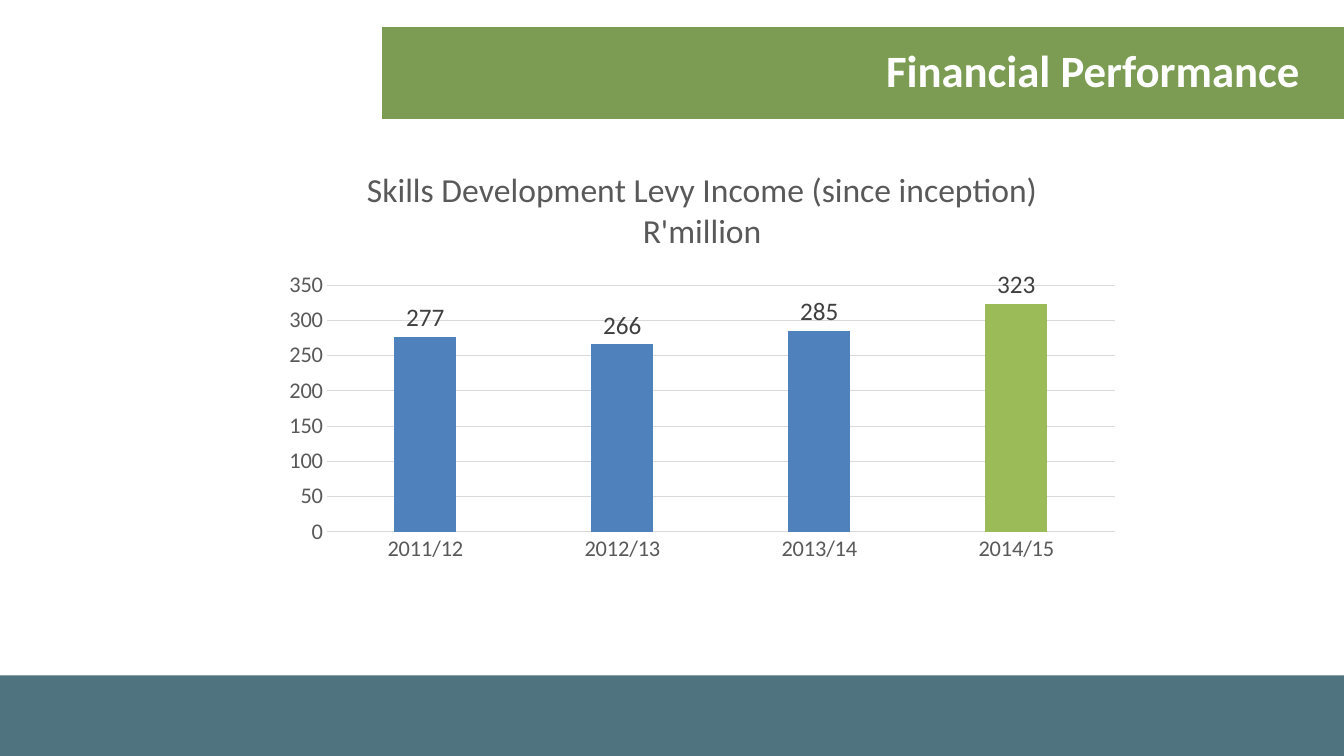
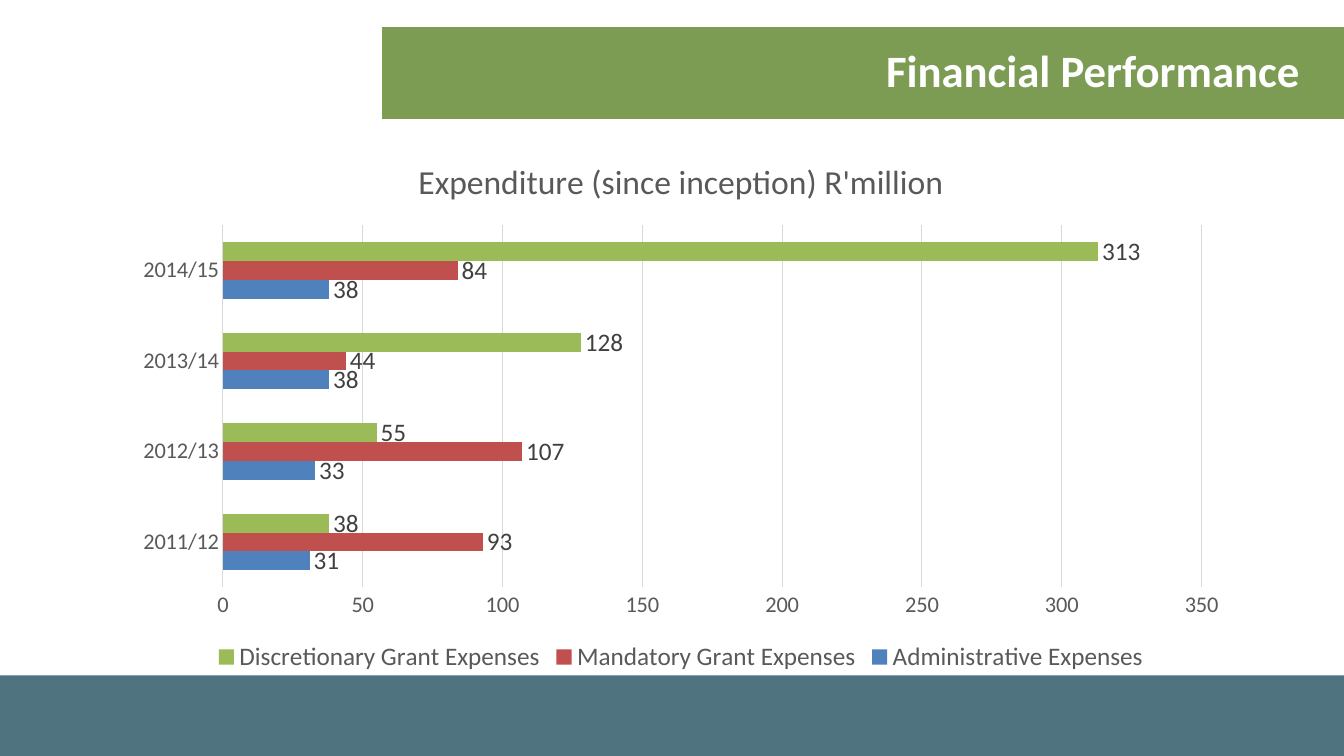
"""Build two financial performance slides with charts of levy income and expenditure."""
from dataclasses import dataclass, field

from lxml import etree
from pptx import Presentation
from pptx.chart.data import CategoryChartData
from pptx.dml.color import RGBColor
from pptx.enum.chart import XL_CHART_TYPE as ChartType
from pptx.enum.chart import XL_LABEL_POSITION as LabelPosition
from pptx.enum.chart import XL_LEGEND_POSITION as LegendPosition
from pptx.enum.chart import XL_TICK_MARK as TickMark
from pptx.enum.shapes import MSO_SHAPE as Preset
from pptx.enum.text import MSO_ANCHOR as Anchor
from pptx.enum.text import PP_ALIGN as Align
from pptx.oxml.ns import qn
from pptx.util import Pt

FONT = "Calibri"
COLORS = {
    "footer": "4F737F",
    "band": "7B9C52",
    "heading": "FFFFFF",
    "blue": "4F81BD",
    "red": "C0504D",
    "green": "9BBB59",
    "text": "595959",
    "label": "404040",
    "rule": "D9D9D9",
    "shadow": "000000",
}
YEARS = ("2011/12", "2012/13", "2013/14", "2014/15")
HEADING = "Financial Performance"


@dataclass(frozen=True)
class Box:
    left: float
    top: float
    width: float
    height: float

    def lengths(self) -> tuple:
        return tuple(Pt(v) for v in (self.left, self.top, self.width, self.height))


@dataclass(frozen=True)
class Band:
    box: Box
    color: str
    shadow: bool = False


@dataclass(frozen=True)
class Series:
    name: str
    values: tuple
    color: str
    highlights: dict = field(default_factory=dict)


@dataclass(frozen=True)
class ChartSpec:
    title: str
    kind: ChartType
    box: Box
    gap: int
    overlap: int
    series: tuple
    legend: bool = False


TITLE_BOX = Box(72, 4.5, 864, 90)
BANDS = (
    Band(Box(0, 482.4, 960, 57.6), "footer", shadow=True),
    Band(Box(272.9, 19.4, 688, 65.5), "band"),
)
CHARTS = (
    ChartSpec(
        "Skills Development Levy Income (since inception) R'million",
        ChartType.COLUMN_CLUSTERED, Box(194.4, 105.1, 614.2, 303.1), 219, -27,
        (Series("Series 1", (277, 266, 285, 323), "blue", {3: "green"}),),
    ),
    ChartSpec(
        "Expenditure (since inception) R'million",
        ChartType.BAR_CLUSTERED, Box(86.4, 97.9, 799.9, 385.9), 182, 0,
        (
            Series("Administrative Expenses", (31, 33, 38, 38), "blue"),
            Series("Mandatory Grant Expenses", (93, 107, 44, 84), "red"),
            Series("Discretionary Grant Expenses", (38, 55, 128, 313), "green"),
        ),
        legend=True,
    ),
)


def rgb(key: str) -> RGBColor:
    return RGBColor.from_string(COLORS[key])


def style_font(font, size: float, color: str, bold: bool = False) -> None:
    font.name = FONT
    font.size = Pt(size)
    font.bold = bold
    font.color.rgb = rgb(color)


def paint(fill, color: str) -> None:
    fill.solid()
    fill.fore_color.rgb = rgb(color)


def style_rule(line) -> None:
    line.width = Pt(0.75)
    line.color.rgb = rgb("rule")


def add_shadow(shape) -> None:
    effects = shape.element.spPr.find(qn("a:effectLst"))
    outer = etree.SubElement(
        effects, qn("a:outerShdw"), blurRad=str(Pt(3.1)), dist=str(Pt(1.8)),
        dir="5400000", rotWithShape="0",
    )
    tint = etree.SubElement(outer, qn("a:srgbClr"), val=COLORS["shadow"])
    etree.SubElement(tint, qn("a:alpha"), val="35000")


def add_layout_bands(layout, slide) -> None:
    for band in BANDS:
        shape = slide.shapes.add_shape(Preset.RECTANGLE, *band.box.lengths())
        paint(shape.fill, band.color)
        shape.line.fill.background()
        shape.shadow.inherit = False
        if band.shadow:
            add_shadow(shape)
        layout.shapes.element.append(shape.element)


def set_heading(slide) -> None:
    heading = slide.shapes.title
    heading.left, heading.top, heading.width, heading.height = TITLE_BOX.lengths()
    frame = heading.text_frame
    frame.text = HEADING
    frame.vertical_anchor = Anchor.MIDDLE
    frame.paragraphs[0].alignment = Align.RIGHT
    style_font(frame.paragraphs[0].runs[0].font, 32, "heading", bold=True)


def style_axes(chart) -> None:
    for axis in (chart.category_axis, chart.value_axis):
        axis.major_tick_mark = axis.minor_tick_mark = TickMark.NONE
        style_font(axis.tick_labels.font, 16, "text")
    chart.category_axis.has_major_gridlines = False
    style_rule(chart.category_axis.format.line)
    amounts = chart.value_axis
    amounts.minimum_scale, amounts.maximum_scale, amounts.major_unit = 0, 350, 50
    amounts.format.line.fill.background()
    amounts.has_major_gridlines = True
    style_rule(amounts.major_gridlines.format.line)


def style_series(plot, series_specs: tuple) -> None:
    for series, spec in zip(plot.series, series_specs):
        series.invert_if_negative = False
        paint(series.format.fill, spec.color)
        for index, color in spec.highlights.items():
            paint(series.points[index].format.fill, color)
        labels = series.data_labels
        labels.show_value = True
        labels.position = LabelPosition.OUTSIDE_END
        style_font(labels.font, 18, "label")


def add_performance_chart(slide, spec: ChartSpec) -> None:
    figures = CategoryChartData(number_format="General")
    figures.categories = YEARS
    for series in spec.series:
        figures.add_series(series.name, series.values)
    chart = slide.shapes.add_chart(spec.kind, *spec.box.lengths(), figures).chart
    chart.font.name, chart.font.size = FONT, Pt(16)
    chart.has_title = True
    caption = chart.chart_title.text_frame
    caption.text = spec.title
    style_font(caption.paragraphs[0].runs[0].font, 24, "text")
    chart.chart_title.include_in_layout = False
    chart.has_legend = spec.legend
    if spec.legend:
        chart.legend.position = LegendPosition.BOTTOM
        chart.legend.include_in_layout = False
        style_font(chart.legend.font, 18, "text")
    plot = chart.plots[0]
    plot.vary_by_categories = False
    plot.gap_width, plot.overlap = spec.gap, spec.overlap
    style_axes(chart)
    style_series(plot, spec.series)


def main() -> None:
    deck = Presentation()
    deck.slide_width, deck.slide_height = Pt(960), Pt(540)
    layout = deck.slide_layouts[5]
    slides = [deck.slides.add_slide(layout) for _ in CHARTS]
    add_layout_bands(layout, slides[0])
    for slide, spec in zip(slides, CHARTS):
        set_heading(slide)
        add_performance_chart(slide, spec)
    deck.save("out.pptx")


if __name__ == "__main__":
    main()
